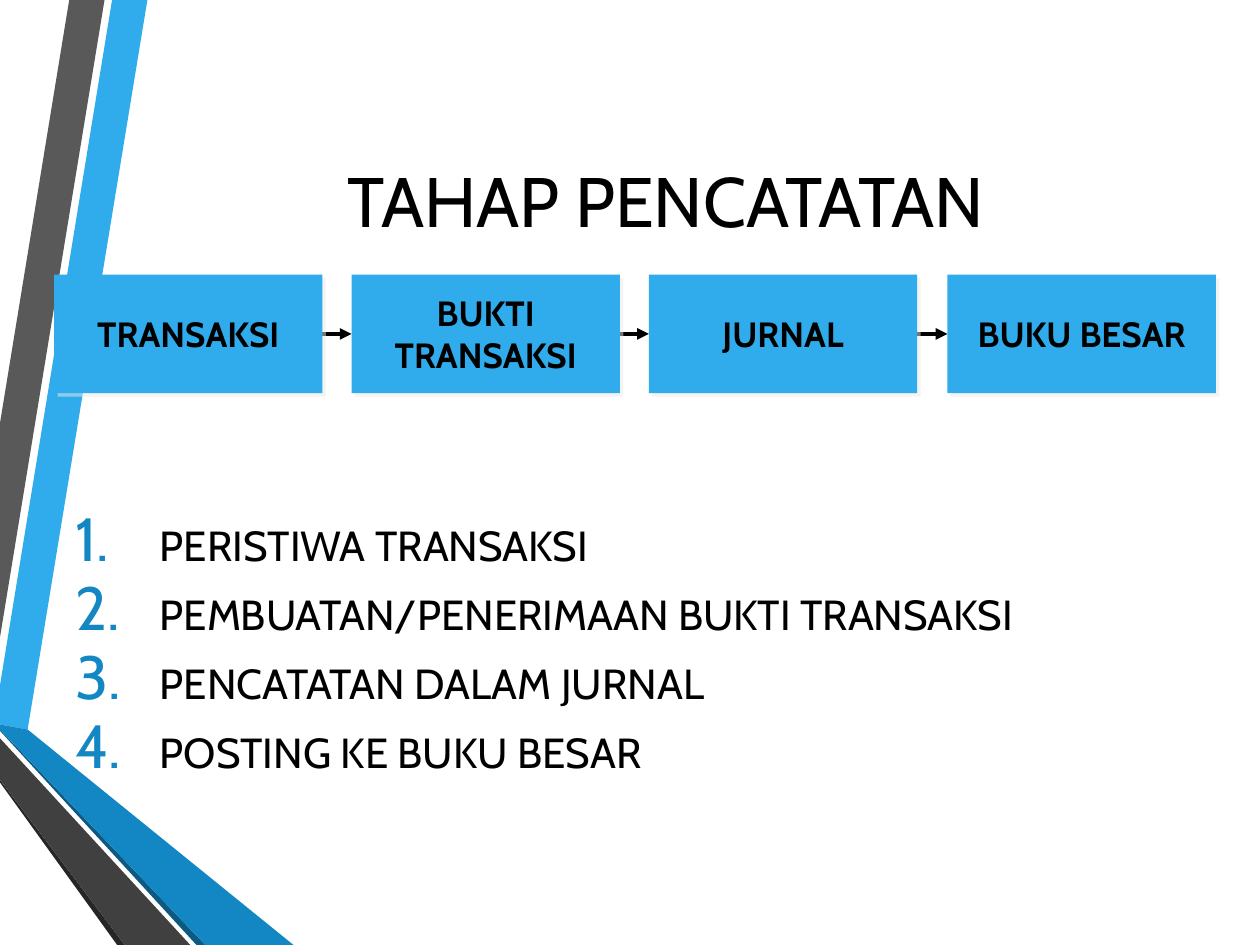
"""Builds the TAHAP PENCATATAN slide: a four-step flow above a numbered list."""
from lxml.etree import SubElement
from pptx import Presentation
from pptx.dml.color import RGBColor
from pptx.enum.shapes import MSO_CONNECTOR, MSO_SHAPE
from pptx.enum.text import MSO_ANCHOR, PP_ALIGN
from pptx.oxml.ns import qn
from pptx.util import Pt

PX = 9144
FONT = "Cabin"
COLORS = {
    "sky": "30ACEC", "blue": "1287C3", "navy": "0C5A82",
    "gray": "595959", "dark": "404040", "black": "262626",
    "text": "000000", "shadow": "EBEBEB",
}
TITLE = "TAHAP PENCATATAN"
STEPS = ["TRANSAKSI", "BUKTI TRANSAKSI", "JURNAL", "BUKU BESAR"]
STAGES = [
    "PERISTIWA TRANSAKSI",
    "PEMBUATAN/PENERIMAAN BUKTI TRANSAKSI",
    "PENCATATAN DALAM JURNAL",
    "POSTING KE BUKU BESAR",
]
RIBBONS = [
    ("sky", [(0, 544), (0, 575), (22, 579), (117, 0), (89, 0)]),
    ("gray", [(83, 0), (55, 0), (0, 336), (0, 506)]),
    ("black", [(0, 619), (0, 621), (93, 750), (99, 750)]),
    ("navy", [(0, 579), (0, 580), (156, 750), (163, 750)]),
    ("blue", [(0, 579), (163, 750), (233, 750), (22, 579), (0, 575)]),
    ("dark", [(0, 619), (99, 750), (151, 750), (0, 586)]),
]
FLOW_LEFT, FLOW_SPAN, FLOW_TOP = 43, 709, 218
STEP_WIDTH, STEP_HEIGHT = 213, 94
ARROW_INSET, ARROW_Y = 205, 265
INDENT = 67


def color(name):
    return RGBColor.from_string(COLORS[name])


def px(*lengths):
    return [length * PX for length in lengths]


def style(paragraph, size, bold=False, align=PP_ALIGN.LEFT):
    paragraph.alignment = align
    paragraph.font.name = FONT
    paragraph.font.size = Pt(size)
    paragraph.font.bold = bold
    paragraph.font.color.rgb = color("text")


def paint(shape, name):
    shape.fill.solid()
    shape.fill.fore_color.rgb = color(name)
    shape.line.fill.background()
    shape.shadow.inherit = False


def add_ribbon(page, name, points):
    builder = page.shapes.build_freeform(*points[0], scale=PX)
    builder.add_line_segments(points[1:], close=True)
    paint(builder.convert_to_shape(), name)


def add_arrow(page, start, end):
    arrow = page.shapes.add_connector(
        MSO_CONNECTOR.STRAIGHT, *px(start, ARROW_Y, end, ARROW_Y))
    arrow.line.color.rgb = color("text")
    arrow.line.width = Pt(2.25)
    SubElement(arrow.line._get_or_add_ln(), qn("a:tailEnd"), type="triangle")
    SubElement(arrow._element.spPr, qn("a:effectLst"))


def add_step(page, text, left):
    box = page.shapes.add_shape(
        MSO_SHAPE.RECTANGLE, *px(left, FLOW_TOP, STEP_WIDTH, STEP_HEIGHT))
    paint(box, "sky")
    effects = box._element.spPr.find(qn("a:effectLst"))
    shadow = SubElement(effects, qn("a:outerShdw"), dist=str(Pt(2.8)),
                        dir="2700000", algn="ctr", rotWithShape="0")
    tint = SubElement(shadow, qn("a:srgbClr"), val=COLORS["shadow"])
    SubElement(tint, qn("a:alpha"), val="50000")
    box.text_frame.word_wrap = True
    box.text_frame.vertical_anchor = MSO_ANCHOR.MIDDLE
    box.text_frame.text = text
    style(box.text_frame.paragraphs[0], 20, True, PP_ALIGN.CENTER)


def add_text(page, lines, *bounds):
    frame = page.shapes.add_textbox(*px(*bounds)).text_frame
    frame.word_wrap = True
    frame.vertical_anchor = MSO_ANCHOR.MIDDLE
    frame.text = "\n".join(lines)
    return frame.paragraphs


def number(paragraph):
    properties = paragraph._p.get_or_add_pPr()
    properties.set("marL", str(INDENT * PX))
    properties.set("indent", str(-INDENT * PX))
    tint = SubElement(properties, qn("a:buClr"))
    SubElement(tint, qn("a:srgbClr"), val=COLORS["blue"])
    SubElement(properties, qn("a:buSzPct"), val="145000")
    SubElement(properties, qn("a:buFont"), typeface=FONT)
    SubElement(properties, qn("a:buAutoNum"), type="arabicPeriod")


def main():
    deck = Presentation()
    deck.slide_width, deck.slide_height = px(1000, 750)
    page = deck.slides.add_slide(deck.slide_layouts[6])

    for name, points in RIBBONS:
        add_ribbon(page, name, points)

    gaps = len(STEPS) - 1
    lefts = [FLOW_LEFT + index * FLOW_SPAN // gaps for index in range(len(STEPS))]
    for left, following in zip(lefts, lefts[1:]):
        add_arrow(page, left + ARROW_INSET, following)

    heading = add_text(page, [TITLE], 107, 50, 843, 217)[0]
    style(heading, 40, align=PP_ALIGN.CENTER)

    for index, paragraph in enumerate(add_text(page, STAGES, 50, 359, 900, 311)):
        number(paragraph)
        style(paragraph, 24)
        paragraph.space_before = Pt(4.5 if index else 0)
        paragraph.space_after = Pt(6)

    for text, left in zip(STEPS, lefts):
        add_step(page, text, left)

    deck.save("out.pptx")


if __name__ == "__main__":
    main()
